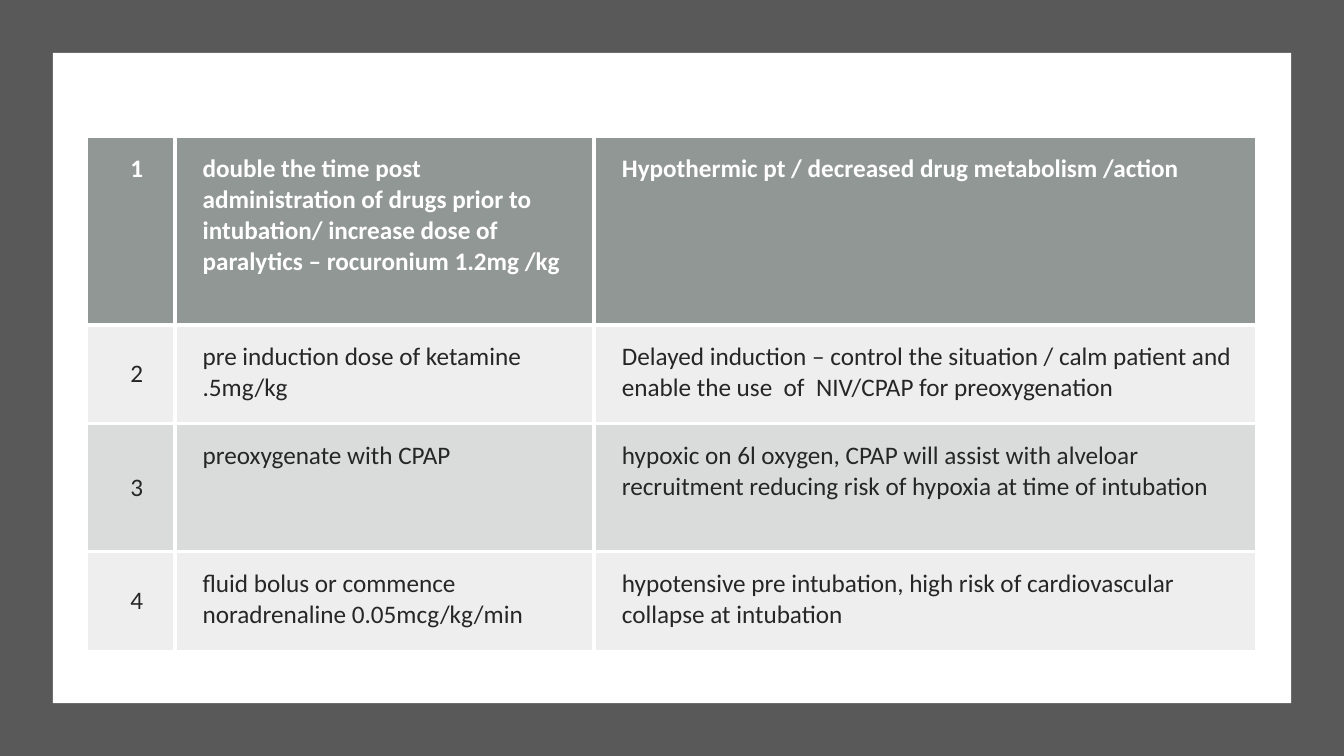
from lxml.etree import SubElement
from pptx import Presentation
from pptx.dml.color import RGBColor
from pptx.enum.shapes import MSO_SHAPE as Shape
from pptx.enum.text import MSO_ANCHOR as Anchor, PP_ALIGN as Align
from pptx.oxml import parse_xml
from pptx.oxml.ns import nsdecls, qn
from pptx.util import Pt

PAGE_WIDTH, PAGE_HEIGHT = 960, 540
WHITE, INK, FRAME = "FFFFFF", "262626", "595959"
HEADER_FILL, BODY_FILL = "636B68", "878E8B"
COLUMN_WIDTHS = (62, 299.5, 472.5)
ROW_HEIGHTS = (134, 70.5, 91.5, 70.5)
ROW_OPACITY = (70, 15, 30, 15)
STEPS = [
    ("double the time post administration of drugs prior to intubation/ "
     "increase dose of paralytics – rocuronium 1.2mg /kg",
     "Hypothermic pt / decreased drug metabolism /action"),
    ("pre induction dose of ketamine .5mg/kg",
     "Delayed induction – control the situation / calm patient and "
     "enable the use  of  NIV/CPAP for preoxygenation"),
    ("preoxygenate with CPAP",
     "hypoxic on 6l oxygen, CPAP will assist with alveloar recruitment "
     "reducing risk of hypoxia at time of intubation"),
    ("fluid bolus or commence noradrenaline 0.05mcg/kg/min",
     "hypotensive pre intubation, high risk of cardiovascular collapse "
     "at intubation"),
]


def paint(fill, color):
    fill.solid()
    fill.fore_color.rgb = RGBColor.from_string(color)


def add_panel(page, box, color):
    panel = page.shapes.add_shape(Shape.RECTANGLE, *map(Pt, box))
    panel.shadow.inherit = False
    paint(panel.fill, color)
    panel.line.fill.background()


def add_backdrop(page, box, margin):
    """Dark frame with a white sheet inset by margin."""
    left, top, width, height = box
    add_panel(page, box, FRAME)
    sheet = (left + margin, top + margin,
             width - 2 * margin, height - 2 * margin)
    add_panel(page, sheet, WHITE)


def fill_cell(cell, color, opacity):
    paint(cell.fill, color)
    tint = cell._tc.tcPr.find(".//" + qn("a:srgbClr"))
    SubElement(tint, qn("a:alpha"), val=str(opacity * 1000))


def add_borders(cell, sides):
    """White rules on the named sides, given in the order L, R, T, B."""
    for index, side in enumerate(sides):
        rule = parse_xml(
            f'<a:ln{side} {nsdecls("a")} w="{Pt(3)}"><a:solidFill>'
            f'<a:srgbClr val="{WHITE}"/></a:solidFill></a:ln{side}>')
        cell._tc.tcPr.insert(index, rule)


def write_cell(cell, text, is_header, is_number):
    cell.margin_left = Pt(20)
    cell.margin_right = cell.margin_top = cell.margin_bottom = Pt(12)
    centred = is_number and not is_header
    cell.vertical_anchor = Anchor.MIDDLE if centred else Anchor.TOP
    cell.text_frame.text = text
    para = cell.text_frame.paragraphs[0]
    para.alignment = Align.CENTER if is_number else Align.LEFT
    font = para.runs[0].font
    font.name, font.size, font.bold = "Calibri", Pt(18), is_header
    font.color.rgb = RGBColor.from_string(WHITE if is_header else INK)


def add_steps_table(page, left, top):
    rows, columns = len(STEPS), len(COLUMN_WIDTHS)
    size = sum(COLUMN_WIDTHS), sum(ROW_HEIGHTS)
    table = page.shapes.add_table(
        rows, columns, *map(Pt, (left, top, *size))).table
    table.horz_banding = False
    for column, width in zip(table.columns, COLUMN_WIDTHS):
        column.width = Pt(width)
    for r, step in enumerate(STEPS):
        table.rows[r].height = Pt(ROW_HEIGHTS[r])
        for c, text in enumerate((str(r + 1), *step)):
            cell = table.cell(r, c)
            write_cell(cell, text, r == 0, c == 0)
            fill_cell(cell, BODY_FILL if r else HEADER_FILL, ROW_OPACITY[r])
            inner = {"L": c > 0, "R": c < columns - 1,
                     "T": r > 0, "B": r < rows - 1}
            add_borders(cell, [side for side in inner if inner[side]])


def main():
    deck = Presentation()
    deck.slide_width, deck.slide_height = Pt(PAGE_WIDTH), Pt(PAGE_HEIGHT)
    page = deck.slides.add_slide(deck.slide_layouts[6])
    add_backdrop(page, (0, 0, PAGE_WIDTH, PAGE_HEIGHT), 37.75)
    add_steps_table(page, 62.75, 98)
    deck.save("out.pptx")


if __name__ == "__main__":
    main()
